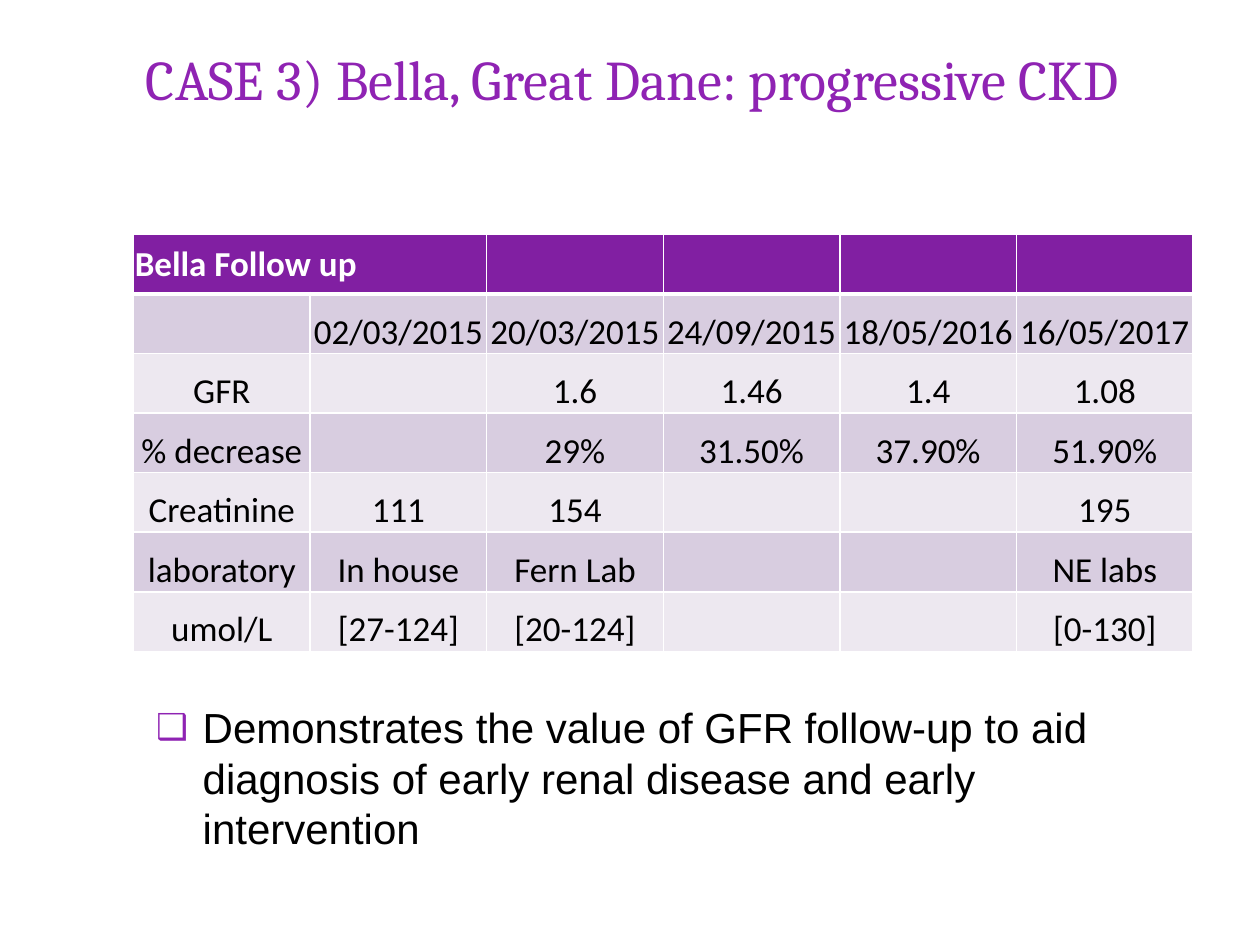
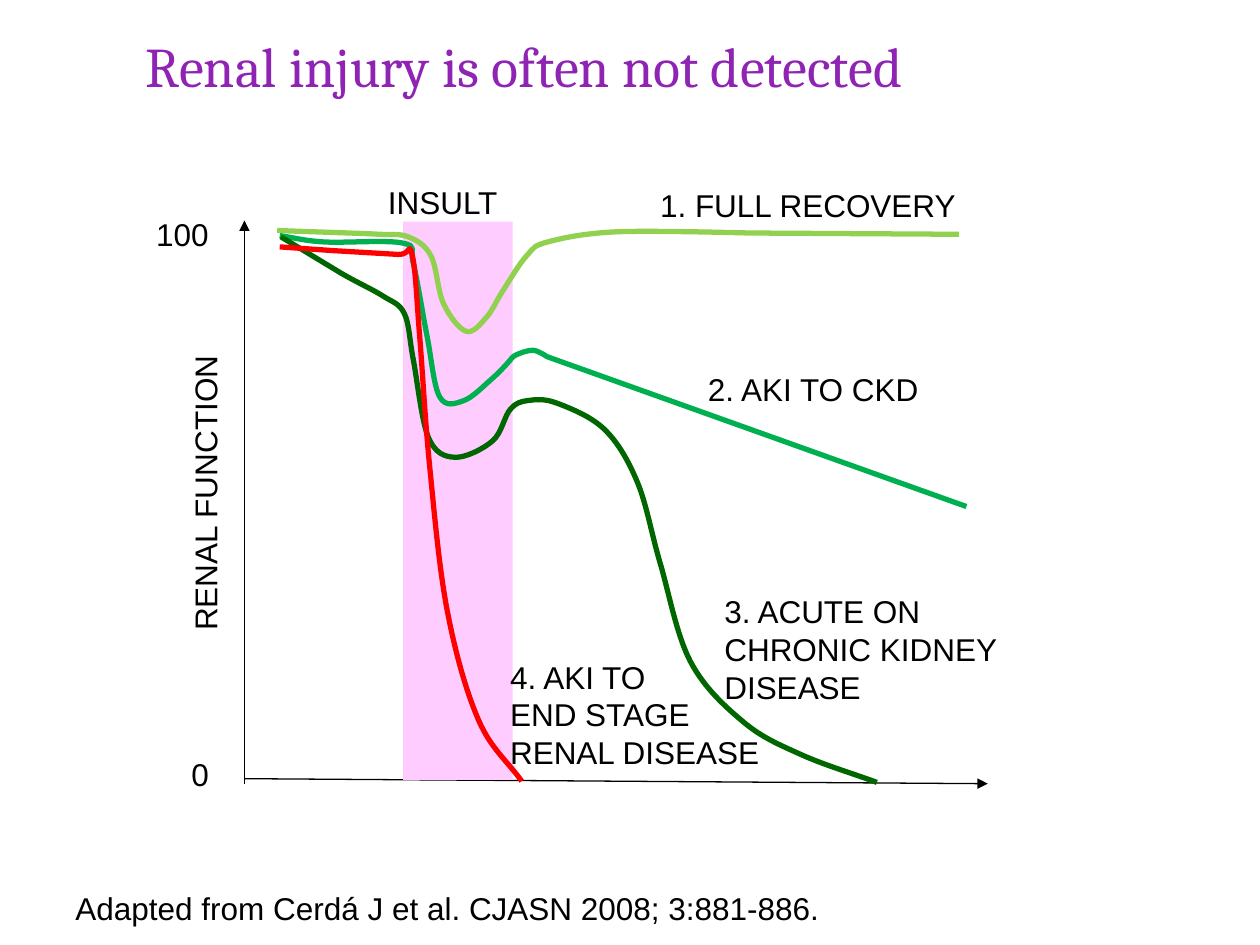
"""Builds two slides on kidney disease: a follow-up table and a renal function diagram."""
import itertools
import pptx
import pptx.util
import pptx.dml.color
import pptx.enum.shapes
import pptx.enum.text
import pptx.oxml
import pptx.oxml.ns
from lxml import etree

COLORS = {
    "title": "8F23B3", "header": "811FA2", "band": "D8CDE0", "light": "EDE8F0",
    "white": "FFFFFF", "ink": "000000", "insult": "FFCCFF", "recovery": "92D050",
    "to_ckd": "00B050", "on_chronic": "006600", "end_stage": "FF0000",
}
HEADING, BODY, TABLE = "Cambria", "Arial", "Calibri"
SLIDE_COLUMNS, SLIDE_ROWS = 10, 7.5
GRID = pptx.util.Inches(1)
TITLE_LEFT, TITLE_WIDTH, TITLE_HEIGHT = 1.06, 8.42, 1.18
LABEL_HEIGHT, LABEL_LINE = 0.4, 0.3

FOLLOW_UP = [
    ["Bella Follow up", "", "", "", "", ""],
    ["", "02/03/2015", "20/03/2015", "24/09/2015", "18/05/2016", "16/05/2017"],
    ["GFR", "", "1.6", "1.46", "1.4", "1.08"],
    ["% decrease", "", "29%", "31.50%", "37.90%", "51.90%"],
    ["Creatinine", "111", "154", "", "", "195"],
    ["laboratory", "In house", "Fern Lab", "", "", "NE labs"],
    ["umol/L", "[27-124]", "[20-124]", "", "", "[0-130]"],
]

COURSES = {
    "recovery": [
        [(2.2, 1.83), (2.77, 1.85)],
        [(2.77, 1.85), (3.01, 1.86), (3.24, 1.88), (3.42, 2.03), (3.52, 2.41),
         (3.7, 2.63), (3.86, 2.52), (3.99, 2.31), (4.18, 2.03), (4.35, 1.92),
         (4.9, 1.84), (5.95, 1.85)],
        [(5.95, 1.85), (7.61, 1.86)],
    ],
    "to_ckd": [
        [(2.22, 1.87), (2.57, 1.92), (3.2, 1.93), (3.28, 2.09), (3.39, 2.67),
         (3.49, 3.15), (3.68, 3.18), (3.9, 3.01), (4.03, 2.88)],
        [(4.03, 2.88), (4.09, 2.82), (4.23, 2.78), (4.34, 2.83)],
        [(4.34, 2.83), (7.67, 4.02)],
    ],
    "on_chronic": [
        [(2.23, 1.88), (2.71, 2.17)],
        [(2.71, 2.17), (3.04, 2.35), (3.21, 2.49), (3.28, 2.85), (3.4, 3.47),
         (3.61, 3.63), (3.91, 3.5), (4.05, 3.25), (4.19, 3.18), (4.42, 3.2),
         (4.8, 3.41), (5.06, 3.83), (5.24, 4.47), (5.48, 5.25), (5.9, 5.73),
         (6.36, 5.99), (6.96, 6.21)],
    ],
    "end_stage": [
        [(2.22, 1.96), (2.65, 1.99)],
        [(2.65, 1.99), (3.16, 2.02)],
        [(3.16, 2.02), (3.27, 2.02), (3.33, 2.66), (3.41, 3.7), (3.55, 4.85),
         (3.8, 5.72), (4.14, 6.2)],
    ],
}

LABELS = [
    ("Adapted from Cerdá J et al. CJASN 2008; 3:881-886.", 0.5, 7.01, 6.16),
    ("100", 1.14, 1.66, 0.62),
    ("0", 1.42, 5.94, 0.34),
    ("1. FULL RECOVERY", 5.14, 1.43, 2.57),
    ("2. AKI TO CKD", 5.52, 2.89, 1.89),
    ("3. ACUTE ON\nCHRONIC KIDNEY\nDISEASE", 5.65, 4.65, 2.39),
    ("4. AKI TO\nEND STAGE\nRENAL DISEASE", 3.95, 5.17, 2.2),
    ("INSULT", 2.98, 1.4, 1.08),
]


def grid(*cells):
    """Turn grid positions into slide lengths."""
    return [pptx.util.Emu(round(cell * GRID)) for cell in cells]


def color(name):
    """Look up a named colour."""
    return pptx.dml.color.RGBColor.from_string(COLORS[name])


def style(paragraph, face, size, ink="ink", bold=False):
    """Set the font of a whole paragraph."""
    font = paragraph.font
    font.name, font.size, font.bold = face, pptx.util.Pt(size), bold
    font.color.rgb = color(ink)


def add_xml(parent, markup):
    """Append one drawing element to its parent."""
    tag, _, rest = markup.partition(" ")
    parent.append(pptx.oxml.parse_xml(f"<{tag} {pptx.oxml.ns.nsdecls('a')} {rest}"))


def add_words(slide, words, left, top, width, height):
    """Place wrapped text with narrow vertical insets and return its paragraph."""
    frame = slide.shapes.add_textbox(*grid(left, top, width, height)).text_frame
    frame.word_wrap = True
    frame.margin_top = frame.margin_bottom = pptx.util.Inches(0.04)
    frame.text = words
    return frame.paragraphs[0]


def add_title(slide, words, top):
    """Place the slide title."""
    title = add_words(slide, words, TITLE_LEFT, top, TITLE_WIDTH, TITLE_HEIGHT)
    style(title, HEADING, 32, "title")


def add_bullet(slide, words, left, top, width, height):
    """Place a takeaway with a square bullet."""
    point = add_words(slide, words, left, top, width, height)
    properties = point._p.get_or_add_pPr()
    indent = pptx.util.Inches(0.37)
    properties.set("marL", str(indent))
    properties.set("indent", str(-indent))
    add_xml(properties, f'a:buClr ><a:srgbClr val="{COLORS["title"]}"/></a:buClr>')
    add_xml(properties, 'a:buSzPct val="85000"/>')
    add_xml(properties, 'a:buFont typeface="Arial"/>')
    add_xml(properties, 'a:buChar char="❑"/>')
    style(point, BODY, 24)


def add_label(slide, words, left, top, width, rotation=0):
    """Place an unwrapped diagram label, one paragraph per line."""
    height = LABEL_HEIGHT + LABEL_LINE * words.count("\n")
    box = slide.shapes.add_textbox(*grid(left, top, width, height))
    box.rotation = rotation
    frame = box.text_frame
    frame.word_wrap = False
    frame.auto_size = pptx.enum.text.MSO_AUTO_SIZE.SHAPE_TO_FIT_TEXT
    frame.text = words
    for paragraph in frame.paragraphs:
        style(paragraph, BODY, 18)


def add_borders(cell, top, bottom):
    """Rule a cell in white, with top and bottom widths in points."""
    properties = cell._tc.get_or_add_tcPr()
    for side, points in zip("LRTB", (1, 1, top, bottom)):
        add_xml(properties, f'a:ln{side} w="{pptx.util.Pt(points)}"><a:solidFill>'
                f'<a:srgbClr val="{COLORS["white"]}"/></a:solidFill></a:ln{side}>')


def add_follow_up(slide, rows, left, top, width, height):
    """Draw the banded follow-up table with a merged heading."""
    table = slide.shapes.add_table(
        len(rows), len(rows[0]), *grid(left, top, width, height)).table
    table.cell(0, 0).merge(table.cell(0, 1))
    anchors = pptx.enum.text.MSO_ANCHOR
    for r, values in enumerate(rows):
        header = r == 0
        for c, value in enumerate(values):
            cell = table.cell(r, c)
            add_borders(cell, 3 if r == 1 else 1, 3 if header else 1)
            cell.fill.solid()
            cell.fill.fore_color.rgb = color("header" if header else ("light", "band")[r % 2])
            cell.margin_left = cell.margin_right = cell.margin_top = pptx.util.Inches(0.01)
            cell.margin_bottom = 0
            cell.vertical_anchor = anchors.MIDDLE if header else anchors.BOTTOM
            cell.text = value
            entry = cell.text_frame.paragraphs[0]
            if not header:
                entry.alignment = pptx.enum.text.PP_ALIGN.CENTER
            style(entry, TABLE, 20, "white" if header else "ink", header)


def add_axis(slide, start, end):
    """Draw a thin axis with an arrowhead at its end."""
    axis = slide.shapes.add_connector(
        pptx.enum.shapes.MSO_CONNECTOR.STRAIGHT, *grid(*start, *end))
    axis.line.color.rgb = color("ink")
    axis.line.width = pptx.util.Pt(0.75)
    properties = axis._element.spPr
    add_xml(properties.find(pptx.oxml.ns.qn("a:ln")), 'a:tailEnd type="triangle"/>')
    etree.SubElement(properties, pptx.oxml.ns.qn("a:effectLst"))


def mirror(point, center):
    """Reflect a point through a center."""
    return tuple(2 * c - p for p, c in zip(point, center))


def bend_spans(stretches):
    """Yield the two handles and end of each span, or None for a straight one."""
    before = mirror(stretches[0][1], stretches[0][0])
    for stretch in stretches:
        beyond = (mirror(stretch[-2], stretch[-1]) if stretch is stretches[-1]
                  else stretch[-2])
        for start, end, after in zip(stretch, stretch[1:], stretch[2:] + [beyond]):
            leaving = [s + (e - b) / 6 for b, s, e in zip(before, start, end)]
            arriving = [e - (a - s) / 6 for s, e, a in zip(start, end, after)]
            yield None if len(stretch) == 2 else (leaving, arriving, end)
            before = start


def add_course(slide, stretches, ink):
    """Draw one course of renal function, smooth within each stretch."""
    knots = stretches[0][:1] + [
        knot for stretch in stretches for knot in stretch[1:]]
    outline = slide.shapes.build_freeform(*grid(*knots[0]))
    outline.add_line_segments([grid(*knot) for knot in knots[1:]], close=False)
    course = outline.convert_to_shape()
    course.shadow.inherit = False
    course.fill.background()
    course.line.color.rgb = color(ink)
    course.line.width = pptx.util.Pt(3)

    corner = [min(axis) for axis in zip(*knots)]
    spans = list(course._element.iter(pptx.oxml.ns.qn("a:lnTo")))
    for span, bend in zip(spans, bend_spans(stretches)):
        if bend:
            span.tag = pptx.oxml.ns.qn("a:cubicBezTo")
            span.clear()
            for point in bend:
                x, y = grid(*(p - c for p, c in zip(point, corner)))
                add_xml(span, f'a:pt x="{x}" y="{y}"/>')


def add_insult_band(slide, left, top, width, height):
    """Shade the period of the insult."""
    band = slide.shapes.add_shape(
        pptx.enum.shapes.MSO_SHAPE.RECTANGLE, *grid(left, top, width, height))
    band.shadow.inherit = False
    band.fill.solid()
    band.fill.fore_color.rgb = color("insult")
    band.line.fill.background()


def main():
    """Build and save both slides."""
    deck = pptx.Presentation()
    deck.slide_width, deck.slide_height = grid(SLIDE_COLUMNS, SLIDE_ROWS)
    blank = deck.slide_layouts[6]

    case = deck.slides.add_slide(blank)
    add_title(case, "CASE 3) Bella, Great Dane: progressive CKD", 0.31)
    add_follow_up(case, FOLLOW_UP, 1.06, 1.86, 8.41, 3.31)
    add_bullet(case, "Demonstrates the value of GFR follow-up to aid diagnosis of early "
               "renal disease and early intervention", 1.14, 5.53, 8.42, 1.13)

    injury = deck.slides.add_slide(blank)
    add_title(injury, "Renal injury is often not detected", 0.21)
    add_axis(injury, (1.94, 6.22), (1.94, 1.75))
    add_label(injury, "RENAL FUNCTION", 0.42, 3.7, 2.41, rotation=270)
    add_axis(injury, (1.94, 6.18), (7.84, 6.22))
    add_insult_band(injury, 3.2, 1.76, 0.87, 4.43)
    for (ink, stretches), label in itertools.zip_longest(
            COURSES.items(), LABELS[3:7]):
        add_course(injury, stretches, ink)
        add_label(injury, *label)
    for label in LABELS[:3] + LABELS[7:]:
        add_label(injury, *label)

    deck.save("out.pptx")


if __name__ == "__main__":
    main()
